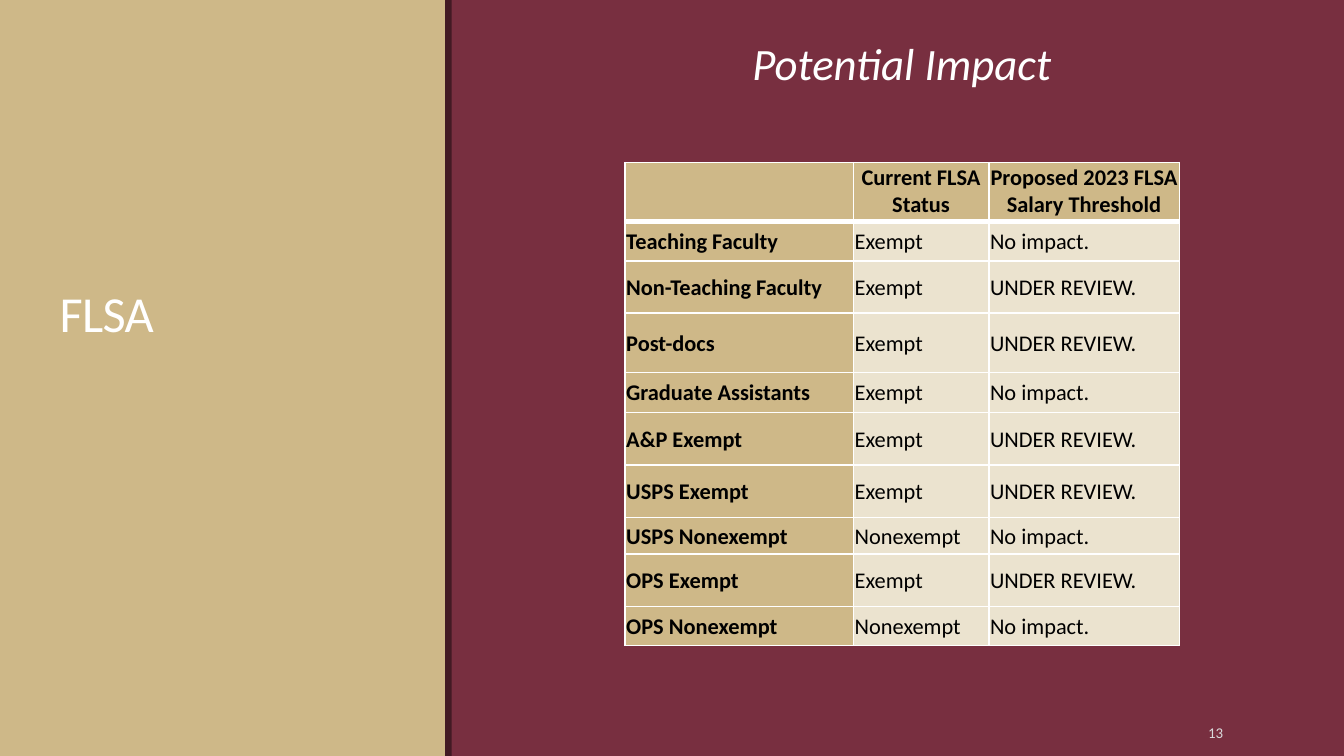
"""Build the FLSA potential impact slide."""

from lxml.etree import fromstring
from pptx import Presentation
from pptx.dml.color import RGBColor
from pptx.enum.shapes import MSO_SHAPE
from pptx.enum.text import MSO_ANCHOR, MSO_AUTO_SIZE, PP_ALIGN
from pptx.oxml.ns import nsdecls
from pptx.util import Pt

GARNET, GOLD, CREAM, DARK = "782F40", "CEB888", "EBE3CF", "421A24"
WHITE, BLACK, GREY = "FFFFFF", "000000", "D9D9DB"

BARS = [(0, 239, GOLD), (238.4, 3.6, DARK)]
HEADER = ("", "Current FLSA Status", "Proposed 2023 FLSA Salary Threshold")
NO_IMPACT, REVIEW = "No impact.", "UNDER REVIEW."
ROWS = [
    ("Teaching Faculty", "Exempt", NO_IMPACT),
    ("Non-Teaching Faculty", "Exempt", REVIEW),
    ("Post-docs", "Exempt", REVIEW),
    ("Graduate Assistants", "Exempt", NO_IMPACT),
    ("A&P Exempt", "Exempt", REVIEW),
    ("USPS Exempt", "Exempt", REVIEW),
    ("USPS Nonexempt", "Nonexempt", NO_IMPACT),
    ("OPS Exempt", "Exempt", REVIEW),
    ("OPS Nonexempt", "Nonexempt", NO_IMPACT),
]
COLUMN_WIDTHS = [122.4, 72.5, 102.2]
ROW_HEIGHTS = [31.7, 20.9, 28.1, 31.7, 21.6, 28.1, 28.1, 19.6, 28.1, 20.9]


def color(value):
    return RGBColor.from_string(value)


def write(frame, text, size, fill=WHITE, bold=False, italic=False,
          align=PP_ALIGN.LEFT, spacing=None, tracking=None):
    paragraph = frame.paragraphs[0]
    paragraph.alignment = align
    paragraph.line_spacing = spacing
    run = paragraph.add_run()
    run.text = text
    font = run.font
    font.name, font.size, font.bold, font.italic = "Calibri", Pt(size), bold, italic
    font.color.rgb = color(fill)
    if tracking is not None:
        run.font._element.set("spc", str(tracking))


def add_bar(slide, left, width, fill, height):
    bar = slide.shapes.add_shape(MSO_SHAPE.RECTANGLE, Pt(left), 0, Pt(width), height)
    bar.shadow.inherit = False
    bar.fill.solid()
    bar.fill.fore_color.rgb = color(fill)
    bar.line.fill.background()


def add_text(slide, box, text, size, anchor=MSO_ANCHOR.TOP, **style):
    shape = slide.shapes.add_textbox(*map(Pt, box))
    shape.text_frame.word_wrap = True
    shape.text_frame.vertical_anchor = anchor
    write(shape.text_frame, text, size, **style)


def set_borders(cell, **widths):
    properties = cell._tc.get_or_add_tcPr()
    for index, side in enumerate("LRTB"):
        properties.insert(index, fromstring(
            f'<a:ln{side} {nsdecls("a")} w="{Pt(widths.get(side, 1))}"><a:solidFill>'
            f'<a:srgbClr val="{WHITE}"/></a:solidFill></a:ln{side}>'))


def format_cell(cell, text, row, column):
    is_header = row == 0
    is_label = is_header or column == 0
    cell.margin_left = cell.margin_right = cell.margin_top = Pt(0.7)
    cell.margin_bottom = 0
    cell.vertical_anchor = MSO_ANCHOR.TOP if is_header else MSO_ANCHOR.MIDDLE
    cell.fill.solid()
    cell.fill.fore_color.rgb = color(GOLD if is_label else CREAM)
    write(cell.text_frame, text, 12, BLACK, bold=is_label,
          align=PP_ALIGN.CENTER if is_header else PP_ALIGN.LEFT)
    set_borders(cell, B=3 if is_header else 1, T=3 if row == 1 else 1)


def add_impact_table(slide, left, top):
    records = [HEADER, *ROWS]
    table = slide.shapes.add_table(
        len(records), len(HEADER), Pt(left), Pt(top),
        Pt(sum(COLUMN_WIDTHS)), Pt(sum(ROW_HEIGHTS))).table
    table.horz_banding = False
    for column, width in zip(table.columns, COLUMN_WIDTHS):
        column.width = Pt(width)
    for row, height in zip(table.rows, ROW_HEIGHTS):
        row.height = Pt(height)
    for row, record in enumerate(records):
        for column, text in enumerate(record):
            format_cell(table.cell(row, column), text, row, column)


def place_title(slide, box, text):
    title = slide.shapes.title
    title.left, title.top, title.width, title.height = map(Pt, box)
    frame = title.text_frame
    frame.auto_size = MSO_AUTO_SIZE.NONE
    frame.word_wrap = True
    frame.vertical_anchor = MSO_ANCHOR.BOTTOM
    frame.margin_left = frame.margin_right = Pt(5.4)
    frame.margin_top = frame.margin_bottom = Pt(2.7)
    write(frame, text, 27, spacing=0.85, tracking=-40)
    slide.shapes.element.append(title.element)


def main():
    presentation = Presentation()
    presentation.slide_width, presentation.slide_height = Pt(720), Pt(405)
    slide = presentation.slides.add_slide(presentation.slide_layouts[5])
    slide.background.fill.solid()
    slide.background.fill.fore_color.rgb = color(GARNET)
    for left, width, fill in BARS:
        add_bar(slide, left, width, fill, presentation.slide_height)
    add_text(slide, (584.6, 381.6, 77.8, 21.6), "13", 8, MSO_ANCHOR.MIDDLE,
             fill=GREY, align=PP_ALIGN.RIGHT)
    place_title(slide, (26.6, 51.1, 188.6, 135.4), "FLSA")
    add_impact_table(slide, 334.8, 87.1)
    add_text(slide, (256.3, 15.8, 453.6, 36), "Potential Impact", 24,
             italic=True, align=PP_ALIGN.CENTER)
    presentation.save("out.pptx")


if __name__ == "__main__":
    main()
